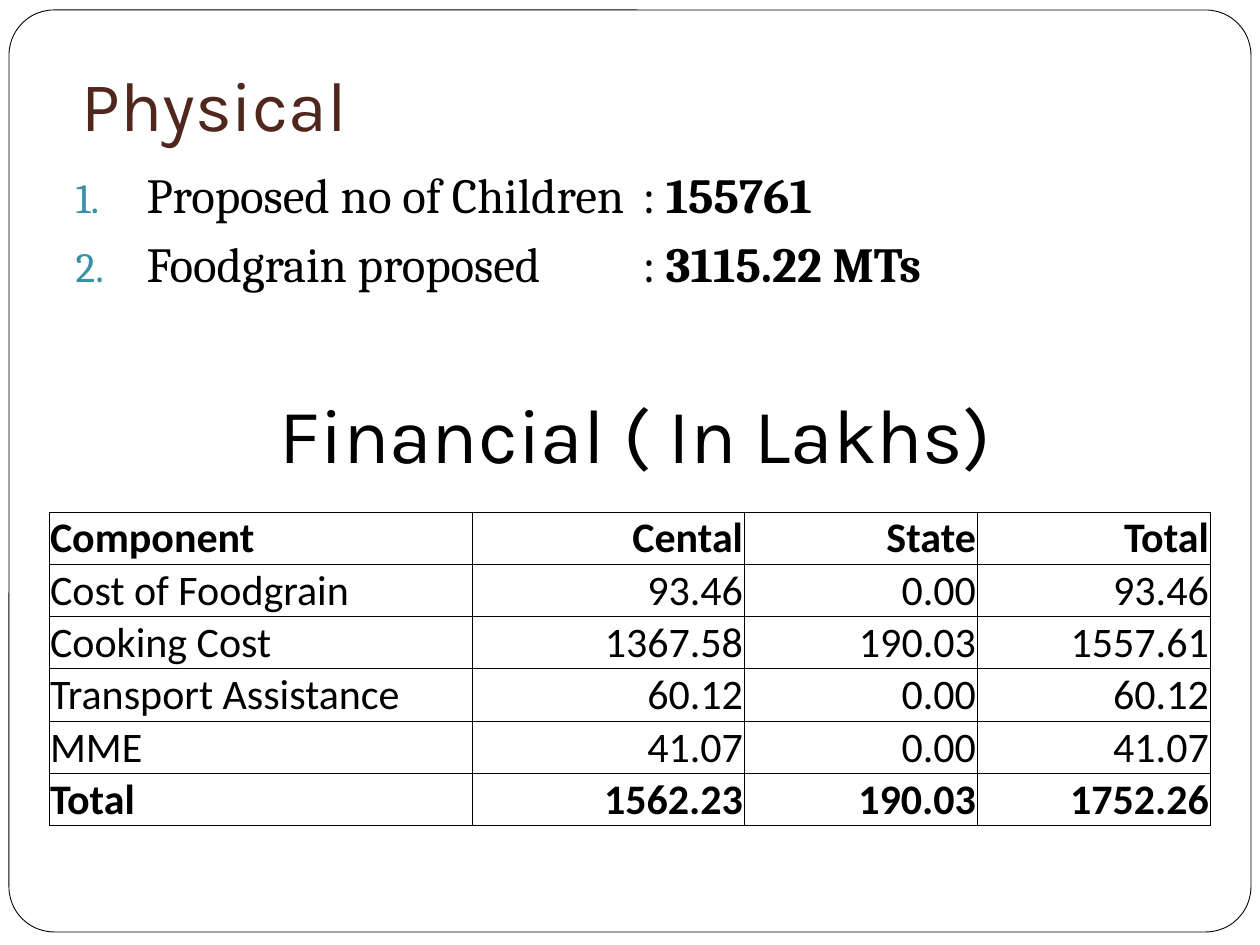
from lxml import etree
from pptx import Presentation
from pptx import util as u
from pptx.dml.color import RGBColor
from pptx.enum import shapes, text
from pptx.oxml import ns

SCALE = 914400 / 126
COLORS = {"ink": "000000", "paper": "FFFFFF", "title": "4F271C", "number": "3891A7"}
COLUMNS = [423, 272, 233, 233]
ROW_HEIGHT = 52
COSTS = [
    ["Component", "Cental", "State", "Total"],
    ["Cost of Foodgrain", "93.46", "0.00", "93.46"],
    ["Cooking Cost", "1367.58", "190.03", "1557.61"],
    ["Transport Assistance", "60.12", "0.00", "60.12"],
    ["MME", "41.07", "0.00", "41.07"],
    ["Total", "1562.23", "190.03", "1752.26"],
]
TARGETS = [
    ("Proposed no of Children \t: ", "155761"),
    ("Foodgrain proposed \t\t: ", "3115.22 MTs"),
]


def px(length):
    return u.Emu(round(length * SCALE))


def color(name):
    return RGBColor.from_string(COLORS[name])


def place(box, left, top, width, height):
    box.left, box.top = px(left), px(top)
    box.width, box.height = px(width), px(height)


def write(para, words, font="Calibri", size=24, ink="ink", bold=False, align="LEFT"):
    para.alignment = getattr(text.PP_ALIGN, align)
    span = para.add_run()
    span.text = words
    span.font.name = font
    span.font.size = u.Pt(size)
    span.font.bold = bold
    span.font.color.rgb = color(ink)


def set_frame(frame, anchor):
    frame.word_wrap = True
    frame.auto_size = text.MSO_AUTO_SIZE.NONE
    frame.vertical_anchor = getattr(text.MSO_ANCHOR, anchor)


def add_element(parent, tag, **attributes):
    return etree.SubElement(parent, ns.qn(tag), attributes)


def number(para):
    para.space_before = u.Pt(5.8)
    props = para._p.get_or_add_pPr()
    props.set("marL", str(px(71)))
    props.set("indent", str(-px(71)))
    add_element(add_element(props, "a:buClr"), "a:srgbClr", val=COLORS["number"])
    add_element(props, "a:buSzPct", val="85000")
    add_element(props, "a:buFontTx")
    add_element(props, "a:buAutoNum", type="arabicPeriod")


def add_border(page):
    border = page.shapes.add_shape(
        shapes.MSO_SHAPE.ROUNDED_RECTANGLE, px(9), px(10), px(1242), px(922))
    border.adjustments[0] = 0.049
    border.shadow.inherit = False
    border.fill.solid()
    border.fill.fore_color.rgb = color("paper")
    border.line.color.rgb = color("ink")
    border.line.width = u.Pt(0.5)
    page.shapes._spTree.insert(2, border._element)


def add_title(page):
    box = page.shapes.title
    place(box, 69, 0, 1134, 158)
    set_frame(box.text_frame, "BOTTOM")
    box.text_frame.margin_bottom = u.Inches(0.1)
    write(box.text_frame.paragraphs[0], "Physical", font="Karla", size=40, ink="title")


def add_targets(page):
    box = page.placeholders[1]
    place(box, 63, 158, 1134, 164)
    frame = box.text_frame
    set_frame(frame, "TOP")
    for index, (label, value) in enumerate(TARGETS):
        para = frame.add_paragraph() if index else frame.paragraphs[0]
        write(para, label, font="Cambria", size=28)
        write(para, value, font="Cambria", size=28, bold=True)
        number(para)


def add_heading(page):
    box = page.shapes.add_textbox(px(69), px(354), px(1134), px(158))
    set_frame(box.text_frame, "MIDDLE")
    write(box.text_frame.paragraphs[0], "Financial ( In Lakhs)",
          font="Karla", size=44, align="CENTER")


def outline(cell):
    props = cell._tc.get_or_add_tcPr()
    for index, side in enumerate(("lnL", "lnR", "lnT", "lnB")):
        line = add_element(props, "a:" + side, w=str(u.Pt(0.5)))
        add_element(add_element(line, "a:solidFill"), "a:srgbClr", val=COLORS["ink"])
        props.insert(index, line)


def add_costs(page):
    table = page.shapes.add_table(
        len(COSTS), len(COLUMNS), px(49), px(512),
        px(sum(COLUMNS)), px(ROW_HEIGHT * len(COSTS))).table
    table.first_row = table.horz_banding = False
    for column, width in zip(table.columns, COLUMNS):
        column.width = px(width)
    for y, values in enumerate(COSTS):
        table.rows[y].height = px(ROW_HEIGHT)
        for x, value in enumerate(values):
            cell = table.cell(y, x)
            cell.margin_left = cell.margin_right = cell.margin_top = px(1)
            cell.margin_bottom = 0
            cell.vertical_anchor = text.MSO_ANCHOR.BOTTOM
            cell.fill.background()
            outline(cell)
            write(cell.text_frame.paragraphs[0], value,
                  bold=y in (0, len(COSTS) - 1), align="RIGHT" if x else "LEFT")


def main():
    deck = Presentation()
    deck.slide_width, deck.slide_height = px(1260), px(945)
    page = deck.slides.add_slide(deck.slide_layouts[1])
    add_border(page)
    add_title(page)
    add_targets(page)
    add_heading(page)
    add_costs(page)
    deck.save("out.pptx")


if __name__ == "__main__":
    main()
